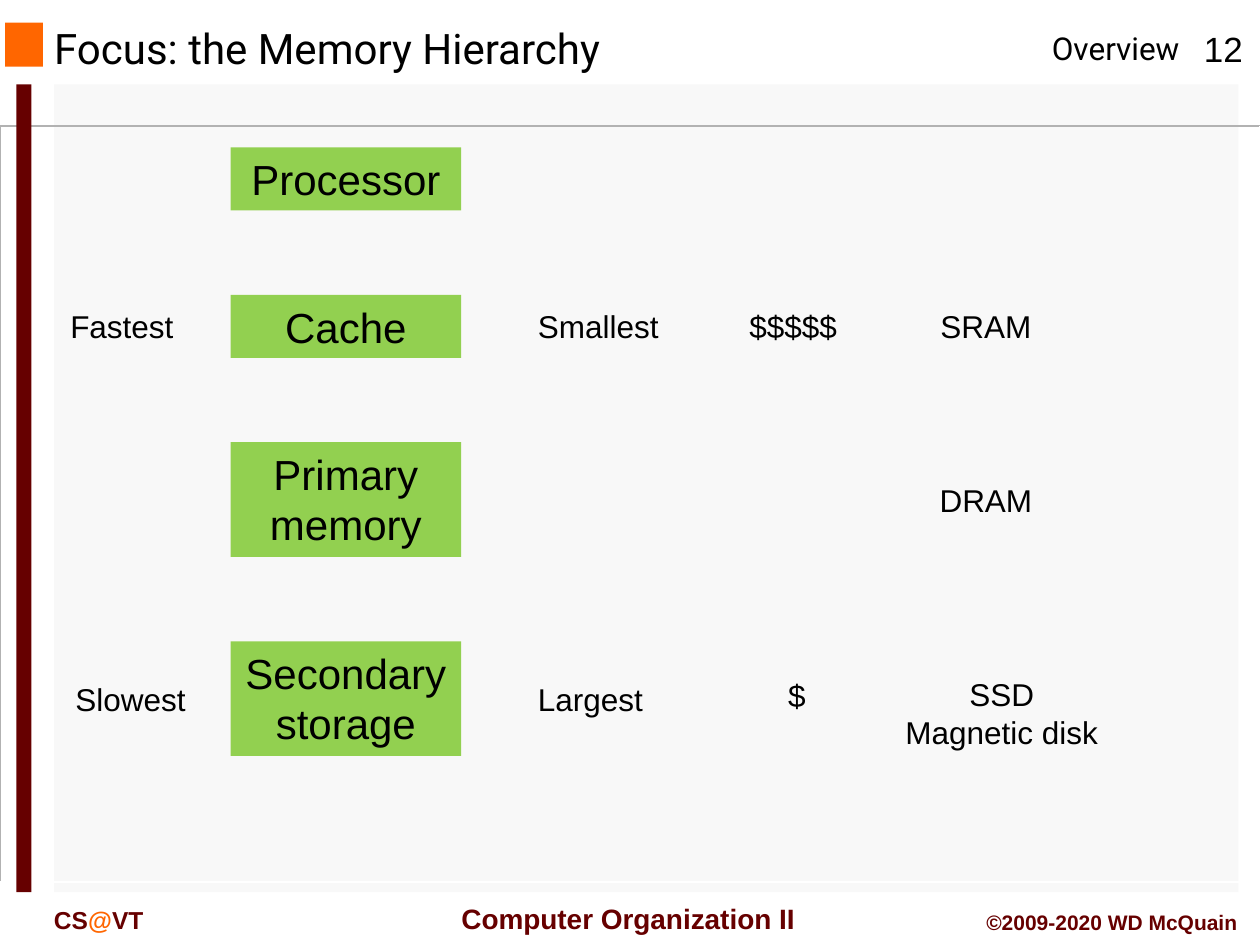
from pptx import Presentation
from pptx import util as u
from pptx.dml.color import RGBColor
from pptx.enum import shapes, text

BLACK = RGBColor(0x00, 0x00, 0x00)
WHITE = RGBColor(0xFF, 0xFF, 0xFF)
PANEL = RGBColor(0xF8, 0xF8, 0xF8)
GREY = RGBColor(0xB2, 0xB2, 0xB2)
ORANGE = RGBColor(0xFF, 0x66, 0x00)
MAROON = RGBColor(0x66, 0x00, 0x00)
GREEN = RGBColor(0x92, 0xD0, 0x50)

LEFT, CENTER, RIGHT = text.PP_ALIGN.LEFT, text.PP_ALIGN.CENTER, text.PP_ALIGN.RIGHT

# Grid of the hierarchy, in inches
TOP, GAP, LINE, PAD = 1.17, 0.67, 0.41, 0.09
BOX_X, BOX_W = 1.83, 1.83
NOTE_W, NOTE_H = 1.17, 0.4
LEVELS = [("Processor", 1), ("Cache", 1), ("Primary memory", 2), ("Secondary storage", 2)]

# Notes: level, left, shift from the level's middle, alignment, lines
NOTES = [
    (1, 0.46, 0, LEFT, ["Fastest"]),
    (1, 4.17, 0, LEFT, ["Smallest"]),
    (1, 5.71, 0, CENTER, ["$$$$$"]),
    (1, 7.24, 0, CENTER, ["SRAM"]),
    (2, 7.24, 0, CENTER, ["DRAM"]),
    (3, 0.5, 0, LEFT, ["Slowest"]),
    (3, 4.17, 0, LEFT, ["Largest"]),
    (3, 5.74, -0.03, CENTER, ["$"]),
    (3, 6.99, 0.12, CENTER, ["SSD", "Magnetic disk"]),
]


def place(item, x, y, w, h):
    item.left, item.top, item.width, item.height = map(u.Inches, (x, y, w, h))


def style(para, size, color=BLACK, align=LEFT, bold=False, face="Arial"):
    para.alignment = align
    font = para.font
    font.name, font.size, font.bold = face, u.Pt(size), bold
    font.color.rgb = color


def block(slide, x, y, w, h, color):
    rect = slide.shapes.add_shape(shapes.MSO_SHAPE.RECTANGLE, *map(u.Inches, (x, y, w, h)))
    rect.shadow.inherit = False
    rect.fill.solid()
    rect.fill.fore_color.rgb = color
    rect.line.fill.background()
    return rect


def edge(slide, color, start, *points):
    path = slide.shapes.build_freeform(*start, scale=u.Inches(1))
    path.add_line_segments(points, close=False)
    shape = path.convert_to_shape()
    shape.shadow.inherit = False
    shape.fill.background()
    shape.line.color.rgb = color
    shape.line.width = u.Pt(1)


def label(slide, x, y, w, h, lines, size, wrap=True, **look):
    frame = slide.shapes.add_textbox(*map(u.Inches, (x, y, w, h))).text_frame
    frame.word_wrap = wrap
    frame.text = "\n".join(lines)
    for para in frame.paragraphs:
        style(para, size, **look)
    return frame


def backdrop(slide):
    block(slide, 0.43, 0.67, 9.4, 6.41, PANEL)
    edge(slide, GREY, (9.81, 0.67), (0.42, 0.67), (0.42, 7.08))
    edge(slide, WHITE, (9.83, 0.67), (9.83, 7.08), (0.44, 7.08))
    block(slide, 0.04, 0.18, 0.3, 0.35, ORANGE)
    block(slide, 0.13, 0.67, 0.12, 6.41, MAROON)


def header(slide):
    title = slide.shapes.title
    place(title, 0.33, 0.19, 6.33, 0.38)
    frame = title.text_frame
    frame.text = "Focus: the Memory Hierarchy"
    frame.vertical_anchor = text.MSO_ANCHOR.MIDDLE
    frame.auto_size = text.MSO_AUTO_SIZE.NONE
    style(frame.paragraphs[0], 24, face="Roboto")
    label(slide, 8.25, 0.18, 1.26, 0.4, ["Overview"], 18, wrap=False, face="Roboto")
    label(slide, 9.42, 0.17, 0.58, 0.43, ["12"], 20, align=CENTER)


def footer(slide):
    look = dict(color=MAROON, bold=True)
    label(slide, 3.48, 7.11, 2.95, 0.37, [" Computer Organization II"], 16,
          wrap=False, align=CENTER, **look)
    mark = label(slide, 0.33, 7.13, 1.5, 0.33, ["CS"], 14, **look).paragraphs[0]
    sign = mark.add_run()
    sign.text = "@"
    sign.font.color.rgb = ORANGE
    mark.add_run().text = "VT"
    label(slide, 7.42, 7.17, 2.5, 0.3, ["©2009-2020 WD McQuain"], 12, align=RIGHT, **look)


def stack(slide):
    """Draw the levels downwards and return their middles."""
    mids, y = [], TOP
    for name, rows in LEVELS:
        h = rows * LINE + PAD
        frame = block(slide, BOX_X, y, BOX_W, h, GREEN).text_frame
        frame.word_wrap = True
        frame.vertical_anchor = text.MSO_ANCHOR.TOP
        frame.text = name
        style(frame.paragraphs[0], 24, align=CENTER)
        mids.append(y + h / 2)
        y += h + GAP
    return mids


def notes(slide, mids):
    for level, x, shift, align, lines in NOTES:
        many = len(lines) > 1
        w, h = (1.92, 0.71) if many else (NOTE_W, NOTE_H)
        label(slide, x, mids[level] - h / 2 + shift, w, h, lines, 18, align=align)


def main():
    deck = Presentation()
    deck.slide_width, deck.slide_height = u.Inches(10), u.Inches(7.5)
    slide = deck.slides.add_slide(deck.slide_layouts[5])
    backdrop(slide)
    header(slide)
    footer(slide)
    notes(slide, stack(slide))
    deck.save("out.pptx")


if __name__ == "__main__":
    main()
